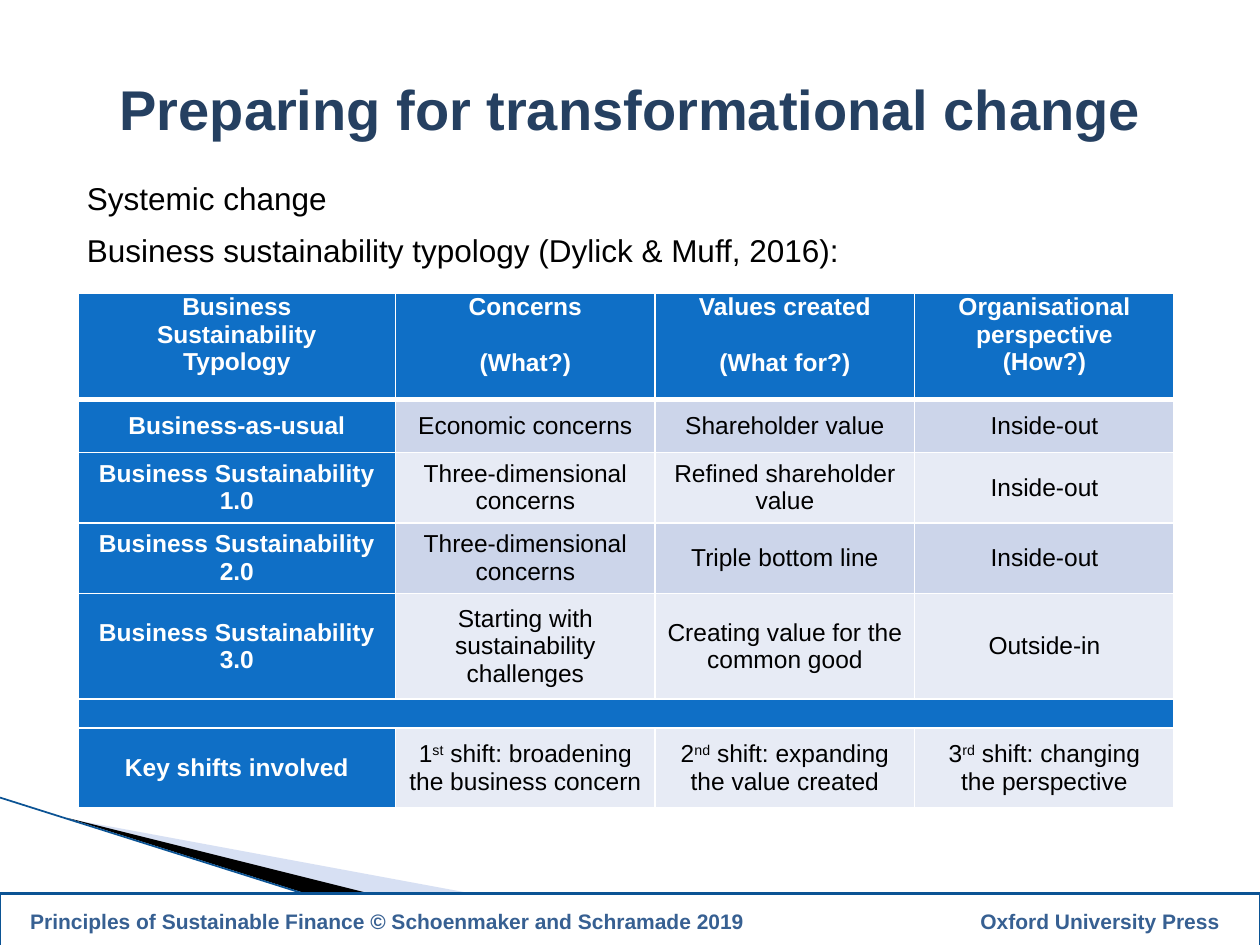
"""Build the slide on preparing for transformational change."""
from lxml import etree
from pptx import Presentation
from pptx.dml.color import RGBColor
from pptx.enum.shapes import MSO_CONNECTOR, MSO_SHAPE
from pptx.enum.text import MSO_ANCHOR, MSO_AUTO_SIZE, PP_ALIGN
from pptx.oxml.ns import qn
from pptx.util import Inches, Pt

LEFT, CENTER = PP_ALIGN.LEFT, PP_ALIGN.CENTER
TOP, MIDDLE = MSO_ANCHOR.TOP, MSO_ANCHOR.MIDDLE
NO_AUTO_SIZE = MSO_AUTO_SIZE.NONE
RECTANGLE, STRAIGHT = MSO_SHAPE.RECTANGLE, MSO_CONNECTOR.STRAIGHT

THEME = {
    "font": "Arial",
    "colors": {"white": "FFFFFF", "black": "000000", "title": "254061", "footer": "376092",
               "rule": "0B5394", "wedge": "9DB2E1", "accent": "0F6FC6",
               "odd_band": "CCD5EA", "even_band": "E7EBF5"},
    "sizes": {"title": 32, "body": 18, "table": 14, "footer": 12, "divider": 6},
}

TITLE = "Preparing for transformational change"
BODY = ["Systemic change", "Business sustainability typology (Dylick & Muff, 2016):"]
FOOTER = "Principles of Sustainable Finance © Schoenmaker and Schramade 2019\tOxford University Press"
ROWS = [
    ["Business\nSustainability\nTypology", "Concerns\n(What?)", "Values created\n(What for?)",
     "Organisational perspective\n(How?)"],
    ["Business-as-usual", "Economic concerns", "Shareholder value", "Inside-out"],
    ["Business Sustainability 1.0", "Three-dimensional concerns", "Refined shareholder value",
     "Inside-out"],
    ["Business Sustainability 2.0", "Three-dimensional concerns", "Triple bottom line",
     "Inside-out"],
    ["Business Sustainability 3.0", "Starting with sustainability challenges",
     "Creating value for the common good", "Outside-in"],
    [],
    ["Key shifts involved", "1^st^ shift: broadening the business concern",
     "2^nd^ shift: expanding\nthe value created", "3^rd^ shift: changing\nthe perspective"],
]
HEADER_GAPS = [0, 16, 16, 0]
COLUMN_WIDTHS = [2.52, 2.06, 2.06, 2.06]
ROW_HEIGHTS = [0.84, 0.42, 0.56, 0.56, 0.84, 0.23, 0.63]
WEDGES = [
    ("wedge", 40, [(0.55, 6.5), (5.95, 7.5), (4.56, 7.5)]),
    ("black", 100, [(0.53, 6.49), (4.57, 7.5), (3.72, 7.5)]),
]


def color(name):
    return RGBColor.from_string(THEME["colors"][name])


def apply(target, **values):
    for name, value in values.items():
        setattr(target, name, value)


def write(paragraph, text, size, color_name, bold=False, **layout):
    apply(paragraph, **layout)
    for index, part in enumerate(text.split("^")):
        run = paragraph.add_run()
        run.text = part
        apply(run.font, name=THEME["font"], size=Pt(THEME["sizes"][size]), bold=bold)
        run.font.color.rgb = color(color_name)
        if index % 2:
            run.font._element.set("baseline", "30000")


def write_lines(frame, lines, gap, *style, **layout):
    for index, line in enumerate(lines):
        paragraph = frame.add_paragraph() if index else frame.paragraphs[0]
        write(paragraph, line, *style, space_before=Pt(gap if index else 0), **layout)


def place(shape, left, top, width, height, anchor):
    apply(shape, left=Inches(left), top=Inches(top), width=Inches(width), height=Inches(height))
    apply(shape.text_frame, word_wrap=True, auto_size=NO_AUTO_SIZE, vertical_anchor=anchor)


def add_wedge(slide, color_name, opacity, points):
    corners = [(Inches(x), Inches(y)) for x, y in points]
    builder = slide.shapes.build_freeform(*corners[0])
    builder.add_line_segments(corners[1:], close=True)
    shape = builder.convert_to_shape()
    shape.shadow.inherit = False
    shape.line.fill.background()
    shape.fill.solid()
    shape.fill.fore_color.rgb = color(color_name)
    fill_color = shape._element.spPr.find(qn("a:solidFill"))[0]
    etree.SubElement(fill_color, qn("a:alpha"), val=str(opacity * 1000))


def add_slope(slide):
    line = slide.shapes.add_connector(STRAIGHT, 0, Inches(6.33), Inches(3.7), Inches(7.5))
    line.line.color.rgb = color("rule")
    line.line.width = Pt(1)
    etree.SubElement(line._element.spPr, qn("a:effectLst"))


def add_footer(slide):
    bar = slide.shapes.add_shape(RECTANGLE, 0, Inches(7.09), Inches(10), Inches(0.44))
    bar.shadow.inherit = False
    bar.fill.solid()
    bar.fill.fore_color.rgb = color("white")
    bar.line.color.rgb = color("rule")
    bar.line.width = Pt(1.5)
    apply(bar.text_frame, margin_left=Inches(0.24), vertical_anchor=MIDDLE, word_wrap=True)
    paragraph = bar.text_frame.paragraphs[0]
    tabs = etree.SubElement(paragraph._p.get_or_add_pPr(), qn("a:tabLst"))
    etree.SubElement(tabs, qn("a:tab"), pos=str(Inches(9.44)), algn="r")
    write(paragraph, FOOTER, "footer", "footer", True, alignment=LEFT)


def format_cell(cell, fill_name, borders):
    properties = cell._tc.get_or_add_tcPr()
    for side, width in borders.items():
        line = etree.SubElement(properties, qn(f"a:ln{side}"), w=str(Pt(width)))
        fill = etree.SubElement(line, qn("a:solidFill"))
        etree.SubElement(fill, qn("a:srgbClr"), val=THEME["colors"]["white"])
    cell.fill.solid()
    cell.fill.fore_color.rgb = color(fill_name)
    apply(cell, margin_left=Inches(0.07), margin_right=Inches(0.07), margin_top=0, margin_bottom=0)


def add_typology_table(slide):
    frame = slide.shapes.add_table(len(ROWS), len(COLUMN_WIDTHS), Inches(0.62), Inches(2.33),
                                   Inches(sum(COLUMN_WIDTHS)), Inches(sum(ROW_HEIGHTS)))
    table = frame.table
    apply(table, first_row=False, horz_banding=False)
    for column, width in zip(table.columns, COLUMN_WIDTHS):
        column.width = Inches(width)
    for row_index, (texts, height) in enumerate(zip(ROWS, ROW_HEIGHTS)):
        table.rows[row_index].height = Inches(height)
        is_header = row_index == 0
        band = "odd_band" if row_index % 2 else "even_band"
        borders = {"L": 1, "R": 1, "T": 3 if row_index == 1 else 1, "B": 3 if is_header else 1}
        for column_index in range(len(COLUMN_WIDTHS)):
            cell = table.cell(row_index, column_index)
            is_label = is_header or column_index == 0 or not texts
            format_cell(cell, "accent" if is_label else band, borders)
            cell.vertical_anchor = TOP if is_header else MIDDLE
            if texts:
                gap = HEADER_GAPS[column_index] if is_header else 0
                write_lines(cell.text_frame, texts[column_index].split("\n"), gap, "table",
                            "white" if is_label else "black", is_label, alignment=CENTER)
            else:
                etree.SubElement(cell.text_frame.paragraphs[0]._p, qn("a:endParaRPr"),
                                 sz=str(THEME["sizes"]["divider"] * 100))
        if not texts:
            table.cell(row_index, 0).merge(table.cell(row_index, len(COLUMN_WIDTHS) - 1))


def main():
    presentation = Presentation()
    apply(presentation, slide_width=Inches(10), slide_height=Inches(7.5))
    slide = presentation.slides.add_slide(presentation.slide_layouts[1])
    title, body = slide.placeholders
    place(title, 0.28, 0.5, 9.45, 0.71, MIDDLE)
    write(title.text_frame.paragraphs[0], TITLE, "title", "title", True, alignment=CENTER)
    place(body, 0.59, 1.31, 8.66, 0.87, TOP)
    write_lines(body.text_frame, BODY, 4, "body", "black", alignment=LEFT, line_spacing=1.2)
    for paragraph in body.text_frame.paragraphs:
        properties = paragraph._p.get_or_add_pPr()
        apply_indent = {"marL": "0", "indent": "0"}
        properties.attrib.update(apply_indent)
        etree.SubElement(properties, qn("a:buNone"))
    for wedge in WEDGES:
        add_wedge(slide, *wedge)
    add_slope(slide)
    add_footer(slide)
    add_typology_table(slide)
    presentation.save("out.pptx")


if __name__ == "__main__":
    main()
